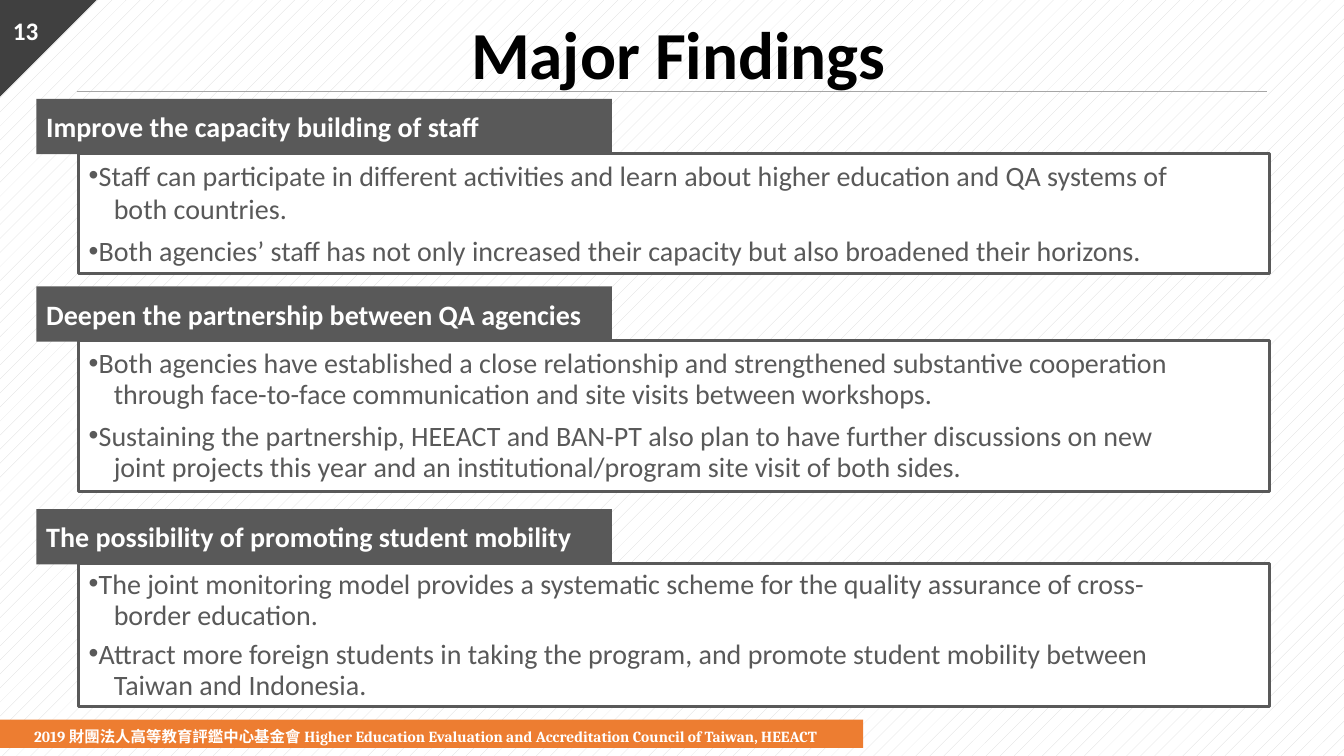
import pptx
import pptx.dml.color
import pptx.enum.dml
import pptx.enum.shapes
import pptx.enum.text
import pptx.oxml
import pptx.oxml.ns
import pptx.util
from dataclasses import dataclass
from typing import Any, Optional

Inches = pptx.util.Inches
Pt = pptx.util.Pt
RGBColor = pptx.dml.color.RGBColor
Kind = pptx.enum.shapes.MSO_SHAPE
Align = pptx.enum.text.PP_ALIGN
Anchor = pptx.enum.text.MSO_ANCHOR

BLACK = RGBColor(0x00, 0x00, 0x00)
WHITE = RGBColor(0xFF, 0xFF, 0xFF)
DARK = RGBColor(0x40, 0x40, 0x40)
GREY = RGBColor(0x59, 0x59, 0x59)
RULE = RGBColor(0xA6, 0xA6, 0xA6)
PALE = RGBColor(0xD9, 0xD9, 0xD9)
ORANGE = RGBColor(0xED, 0x7D, 0x31)

Box = tuple[float, float, float, float]


@dataclass
class Line:
    text: str
    bullet: bool
    pitch: Optional[int] = None


@dataclass
class Panel:
    head: str
    top: float
    height: float
    lines: list[Line]
    anchor: Any = Anchor.TOP


PANELS = [
    Panel("Improve the capacity building of staff", 1.52, 1.19, [
        Line("Staff can participate in different activities and learn about "
             "higher education and QA systems of", True),
        Line("both countries.", False),
        Line("Both agencies’ staff has not only increased their capacity "
             "but also broadened their horizons.", True),
    ]),
    Panel("Deepen the partnership between QA agencies", 3.38, 1.5, [
        Line("Both agencies have established a close relationship and "
             "strengthened substantive cooperation", True),
        Line("through face-to-face communication and site visits between "
             "workshops.", False, 22),
        Line("Sustaining the partnership, HEEACT and BAN-PT also plan to have "
             "further discussions on new", True),
        Line("joint projects this year and an institutional/program site "
             "visit of both sides.", False, 22),
    ]),
    Panel("The possibility of promoting student mobility", 5.59, 1.42, [
        Line("The joint monitoring model provides a systematic scheme for the "
             "quality assurance of cross-", True, 22),
        Line("border education.", False, 22),
        Line("Attract more foreign students in taking the program, and "
             "promote student mobility between", True, 22),
        Line("Taiwan and Indonesia.", False, 22),
    ], Anchor.MIDDLE),
]


def style(para: Any, size: float, color: RGBColor, bold: bool = True,
          face: str = "Calibri", align: Any = Align.LEFT) -> None:
    para.alignment = align
    for run in para.runs:
        run.font.name = face
        run.font.size = Pt(size)
        run.font.bold = bold
        run.font.color.rgb = color


def add_shape(slide: Any, kind: Any, box: Box, fill: RGBColor,
              edge: Optional[RGBColor] = None) -> Any:
    shape = slide.shapes.add_shape(kind, *map(Inches, box))
    shape.shadow.inherit = False
    shape.fill.solid()
    shape.fill.fore_color.rgb = fill
    if edge is None:
        shape.line.fill.background()
    else:
        shape.line.color.rgb = edge
        shape.line.width = Pt(2.25)
    return shape


def add_label(slide: Any, box: Box, text: str) -> Any:
    """Add a wrapped, vertically centred text box and return its paragraph."""
    frame = slide.shapes.add_textbox(*map(Inches, box)).text_frame
    frame.word_wrap = True
    frame.vertical_anchor = Anchor.MIDDLE
    frame.text = text
    return frame.paragraphs[0]


def indent(para: Any, bullet: bool) -> None:
    """Hang a bullet, or align a following line with the bulleted text."""
    props = para._p.get_or_add_pPr()
    props.set("marL", str(Inches(0.1 if bullet else 0.25)))
    props.set("indent", str(Inches(-0.1 if bullet else 0)))
    if bullet:
        space = pptx.oxml.ns.nsdecls("a")
        for tag in ('buFont {} typeface="Arial"', 'buChar {} char="•"'):
            props.append(pptx.oxml.parse_xml(f"<a:{tag.format(space)}/>"))


def add_panel(slide: Any, panel: Panel) -> None:
    body = add_shape(slide, Kind.RECTANGLE,
                     (0.78, panel.top, 11.81, panel.height), WHITE, GREY)
    frame = body.text_frame
    frame.word_wrap = True
    frame.vertical_anchor = panel.anchor
    frame.text = "\n".join(line.text for line in panel.lines)
    for rank, (para, line) in enumerate(zip(frame.paragraphs, panel.lines)):
        indent(para, line.bullet)
        style(para, 20, GREY, bold=False)
        if line.pitch:
            para.line_spacing = Pt(line.pitch)
        if line.bullet and rank:
            para.space_before = Pt(6)

    head = add_shape(slide, Kind.RECTANGLE,
                     (0.36, panel.top - 0.54, 5.71, 0.55), GREY)
    head.text_frame.vertical_anchor = Anchor.MIDDLE
    head.text_frame.text = panel.head
    style(head.text_frame.paragraphs[0], 20, WHITE)


def add_title(slide: Any, text: str) -> None:
    title = slide.shapes.title
    title.left, title.top, title.width, title.height = map(
        Inches, (1.14, 0.12, 11.18, 0.81))
    frame = title.text_frame
    frame.margin_left = frame.margin_right = 0
    frame.margin_top = frame.margin_bottom = 0
    frame.vertical_anchor = Anchor.MIDDLE
    frame.text = text
    style(frame.paragraphs[0], 48, BLACK, align=Align.CENTER)


def add_rule(slide: Any) -> None:
    rule = slide.shapes.add_connector(
        pptx.enum.shapes.MSO_CONNECTOR.STRAIGHT,
        *map(Inches, (0.76, 0.91, 12.57, 0.91)))
    rule.line.color.rgb = RULE
    rule.line.width = Pt(1)
    space = pptx.oxml.ns.nsdecls("a")
    rule._element.spPr.append(pptx.oxml.parse_xml(f"<a:effectLst {space}/>"))


def add_footer(slide: Any) -> None:
    add_shape(slide, Kind.RECTANGLE, (-0.02, 7.14, 8.58, 0.28), ORANGE)
    para = add_label(slide, (0.24, 7.15, 8.32, 0.25),
                     "2019 財團法人高等教育評鑑中心基金會 Higher Education "
                     "Evaluation and Accreditation Council of Taiwan, HEEACT")
    para.line_spacing = Pt(18)
    style(para, 11, WHITE, face="Cambria")


def main() -> None:
    deck = pptx.Presentation()
    deck.slide_width = Inches(13.33)
    deck.slide_height = Inches(7.5)
    slide = deck.slides.add_slide(deck.slide_layouts[5])
    back = slide.background.fill
    back.patterned()
    back.pattern = pptx.enum.dml.MSO_PATTERN.PERCENT_5
    back.fore_color.rgb = PALE
    back.back_color.rgb = WHITE

    corner = add_shape(slide, Kind.RIGHT_TRIANGLE, (0, 0, 0.96, 0.96), DARK)
    corner.rotation = 90
    add_title(slide, "Major Findings")
    add_rule(slide)
    add_footer(slide)
    number = add_label(slide, (-0.02, 0.1, 0.55, 0.4), "13")
    style(number, 18, WHITE, align=Align.CENTER)
    for panel in PANELS:
        add_panel(slide, panel)
    deck.save("out.pptx")


if __name__ == "__main__":
    main()
